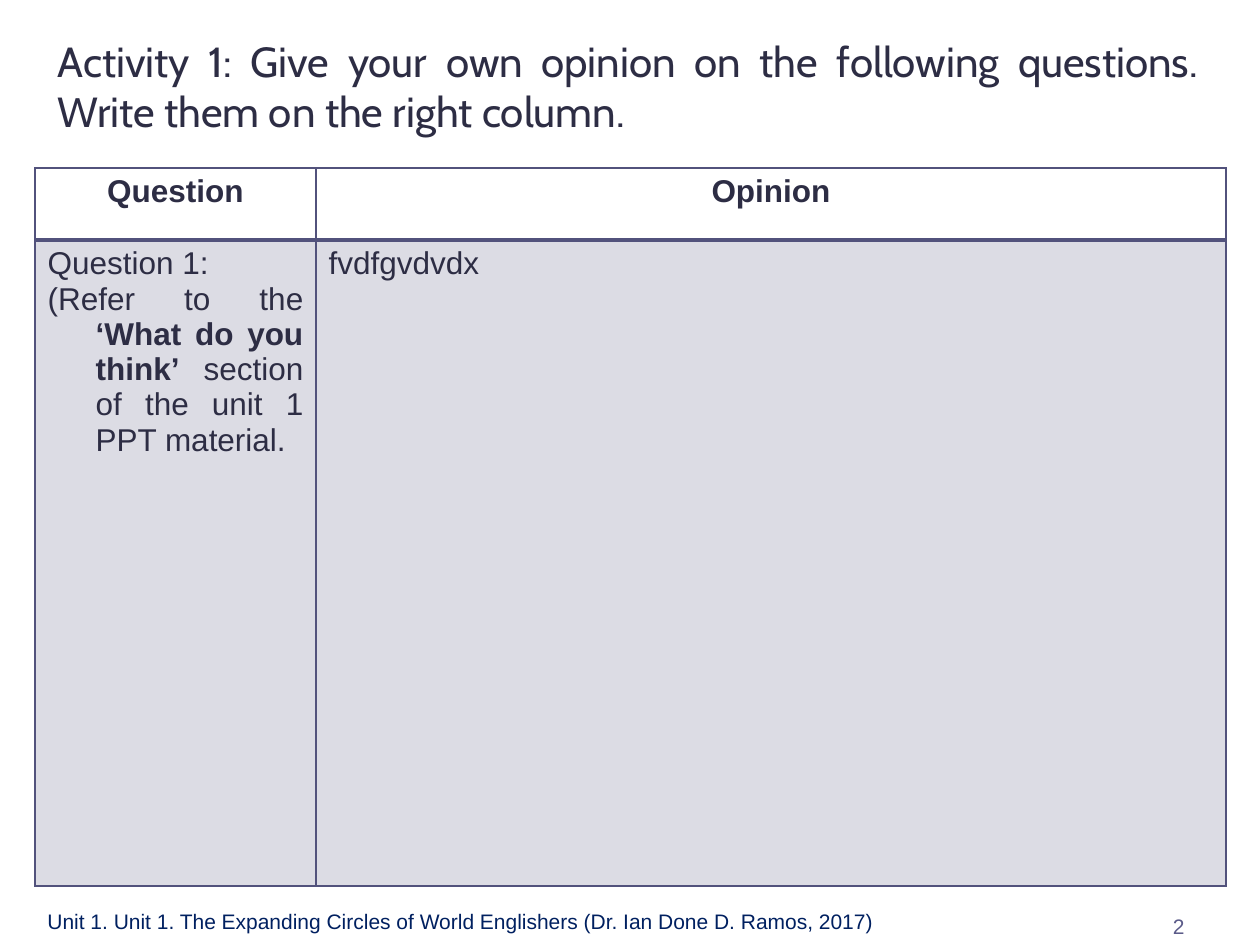
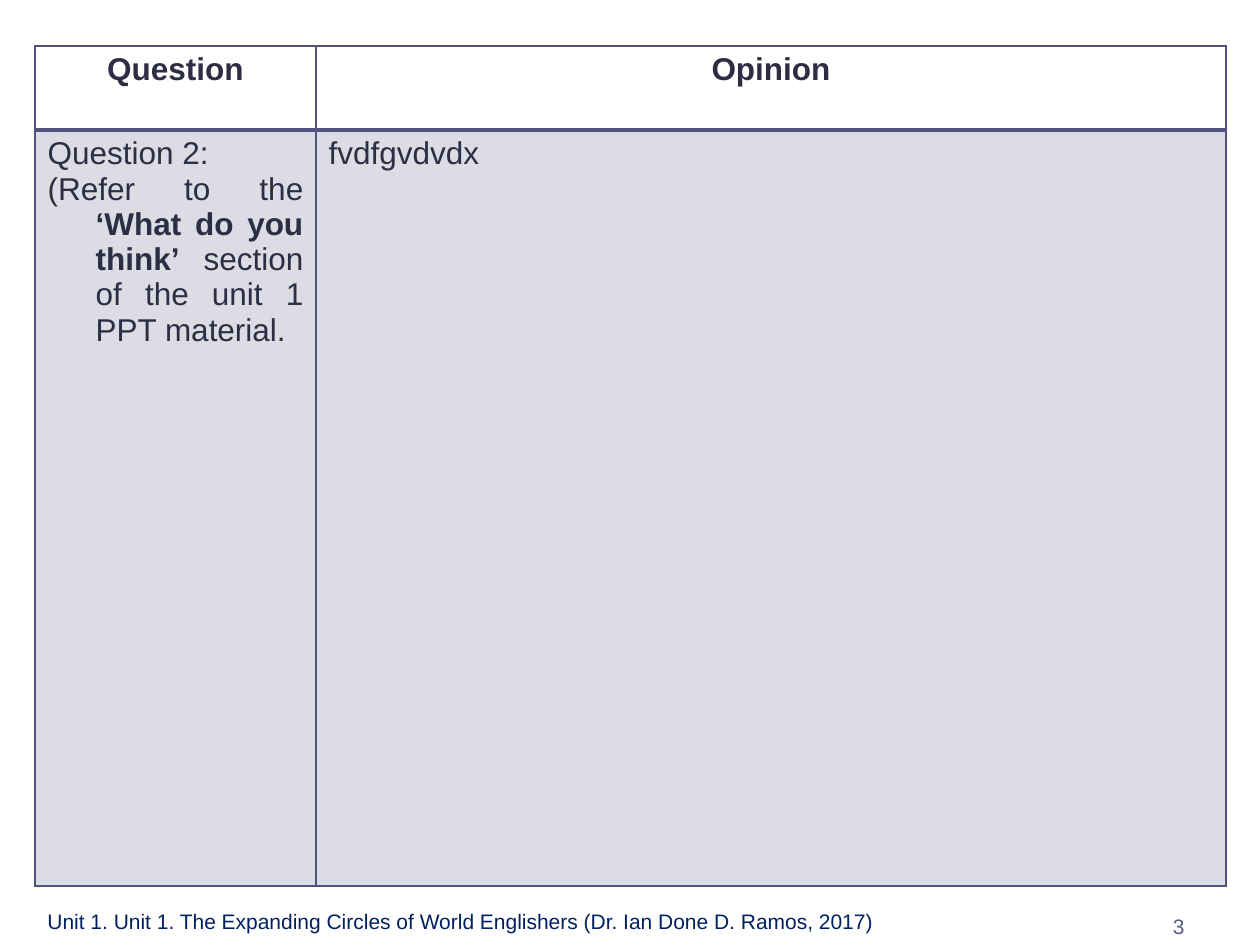
from lxml import etree
from pptx import Presentation
from pptx import util as u
from pptx.dml.color import RGBColor
from pptx.enum import text
from pptx.oxml.ns import qn

EMU_PER_PX = 914400 / 126
INK = RGBColor(0x2D, 0x2D, 0x44)
RULE = RGBColor(0x52, 0x52, 0x7C)
NAVY = RGBColor(0x00, 0x20, 0x60)
NUMBER = RGBColor(0x5B, 0x5B, 0x89)

TITLE_BOX = (45, 29, 1166, 129)
FOOTER_BOX = (35, 877, 864, 63)
NUMBER_BOX = (903, 882, 294, 63)
TABLE_LEFT = 35
COLUMN_WIDTHS = (281, 910)
HANGING_INDENT = 48
CREDIT = ("Unit 1. Unit 1. The Expanding Circles of World Englishers "
          "(Dr. Ian Done D. Ramos, 2017)")


def px(length):
    return u.Emu(round(length * EMU_PER_PX))


def style(para, size, color, align, font="Arial", bold=False):
    para.alignment = align
    for span in para.runs:
        span.font.name = font
        span.font.size = u.Pt(size)
        span.font.bold = bold
        span.font.color.rgb = color


def add_title(page, box, wording):
    title = page.shapes.title
    title.left, title.top, title.width, title.height = map(px, box)
    frame = title.text_frame
    frame.text = wording
    frame.word_wrap = True
    frame.auto_size = text.MSO_AUTO_SIZE.NONE
    frame.vertical_anchor = text.MSO_ANCHOR.TOP
    style(frame.paragraphs[0], 24, INK, text.PP_ALIGN.JUSTIFY, "Cabin")


def add_footer_text(page, box, wording, color, align):
    frame = page.shapes.add_textbox(*map(px, box)).text_frame
    frame.text = wording
    frame.word_wrap = True
    frame.vertical_anchor = text.MSO_ANCHOR.BOTTOM
    style(frame.paragraphs[0], 12, color, align)


def add_footer(page, number):
    add_footer_text(page, NUMBER_BOX, str(number), NUMBER, text.PP_ALIGN.RIGHT)
    add_footer_text(page, FOOTER_BOX, CREDIT, NAVY, text.PP_ALIGN.LEFT)


def set_borders(cell, top, bottom):
    """Draw the four cell edges; top and bottom widths are in points."""
    properties = cell._tc.get_or_add_tcPr()
    for edge, width in (("L", 1), ("R", 1), ("T", top), ("B", bottom)):
        line = etree.SubElement(properties, qn(f"a:ln{edge}"), w=str(u.Pt(width)))
        fill = etree.SubElement(line, qn("a:solidFill"))
        etree.SubElement(fill, qn("a:srgbClr"), val=str(RULE))


def tint(cell):
    """Fill the cell with the rule colour at 20% opacity."""
    cell.fill.solid()
    cell.fill.fore_color.rgb = RULE
    color = cell._tc.tcPr.find(qn("a:solidFill")).find(qn("a:srgbClr"))
    etree.SubElement(color, qn("a:alpha"), val="20000")


def write_question(cell, question):
    frame = cell.text_frame
    frame.text = f"{question}:"
    reference = frame.add_paragraph()
    for wording in ("(Refer to the ", "‘What do you think’ ",
                    "section of the unit 1 PPT material."):
        reference.add_run().text = wording
    for para in frame.paragraphs:
        properties = para._p.get_or_add_pPr()
        properties.set("marL", str(px(HANGING_INDENT)))
        properties.set("indent", str(-px(HANGING_INDENT)))
        style(para, 18, INK, text.PP_ALIGN.JUSTIFY)
    reference.runs[1].font.bold = True


def add_opinion_table(page, top, row_heights, question, opinion):
    table = page.shapes.add_table(
        2, 2, px(TABLE_LEFT), px(top),
        px(sum(COLUMN_WIDTHS)), px(sum(row_heights))).table
    table.horz_banding = False
    for column, width in zip(table.columns, COLUMN_WIDTHS):
        column.width = px(width)
    for row, height in zip(table.rows, row_heights):
        row.height = px(height)

    # Heading row
    for cell, heading in zip(table.rows[0].cells, ("Question", "Opinion")):
        set_borders(cell, top=1, bottom=2)
        cell.fill.background()
        cell.text_frame.text = heading
        style(cell.text_frame.paragraphs[0], 18, INK, text.PP_ALIGN.CENTER, bold=True)

    # Answer row
    for cell in table.rows[1].cells:
        set_borders(cell, top=2, bottom=1)
        tint(cell)
    write_question(table.cell(1, 0), question)
    answer = table.cell(1, 1).text_frame
    answer.text = opinion
    style(answer.paragraphs[0], 18, INK, text.PP_ALIGN.JUSTIFY)


def main():
    deck = Presentation()
    deck.slide_width, deck.slide_height = px(1260), px(945)
    title_only, blank = deck.slide_layouts[5], deck.slide_layouts[6]

    # Activity slide with the first question
    page = deck.slides.add_slide(title_only)
    add_title(page, TITLE_BOX, "Activity 1: Give your own opinion on the following "
                               "questions. Write them on the right column.")
    add_footer(page, 2)
    add_opinion_table(page, 168, (72, 646), "Question 1", "fvdfgvdvdx")

    # Second question
    page = deck.slides.add_slide(blank)
    add_footer(page, 3)
    add_opinion_table(page, 46, (84, 756), "Question 2", "fvdfgvdvdx")

    deck.save("out.pptx")


if __name__ == "__main__":
    main()
